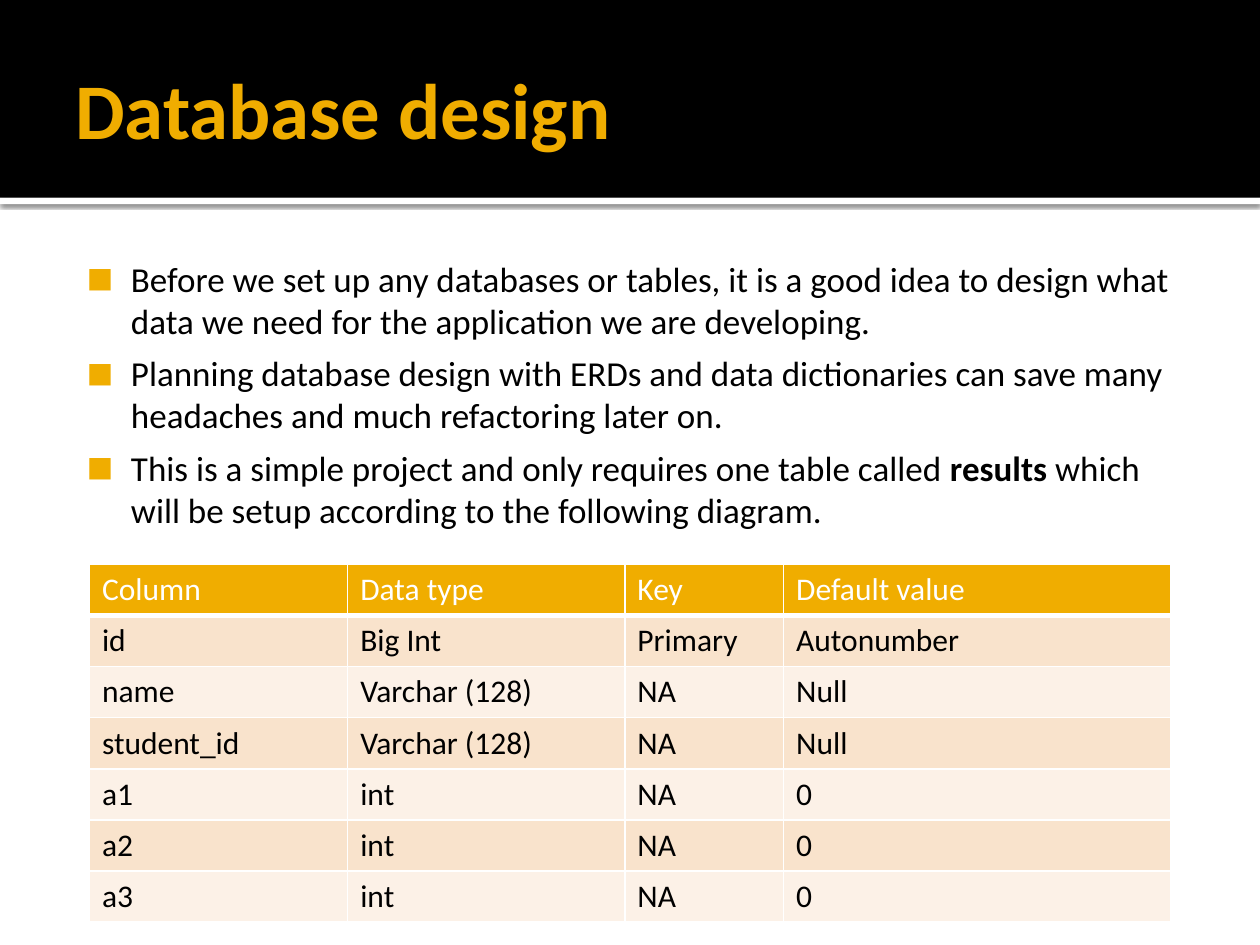
from lxml import etree
from pptx import Presentation
from pptx.dml.color import RGBColor
from pptx.enum import shapes, text
from pptx.oxml import ns
from pptx.util import Inches, Pt

FONT = "Calibri"
BLACK, WHITE, GOLD = "000000", "FFFFFF", "F0AD00"
BANDS = ("F9E3CC", "FCF1E7")

BULLETS = [
    [("Before we set up any databases or tables, it is a good idea to design what "
      "data we need for the application we are developing.", False)],
    [("Planning database design with ERDs and data dictionaries can save many "
      "headaches and much refactoring later on.", False)],
    [("This is a simple project and only requires one table called ", False),
     ("results ", True),
     ("which will be setup according to the following diagram.", False)],
]
COLUMN_WIDTHS = (2.05, 2.2, 1.26, 3.07)
ROWS = [
    ("Column", "Data type", "Key", "Default value"),
    ("id", "Big Int", "Primary", "Autonumber"),
    ("name", "Varchar (128)", "NA", "Null"),
    ("student_id", "Varchar (128)", "NA", "Null"),
    ("a1", "int", "NA", "0"),
    ("a2", "int", "NA", "0"),
    ("a3", "int", "NA", "0"),
]


def color(value):
    return RGBColor.from_string(value)


def add_xml(parent, tag, **attributes):
    values = {name: str(value) for name, value in attributes.items()}
    return etree.SubElement(parent, ns.qn(tag), values)


def style(span, size, value, bold=False):
    span.font.name = FONT
    span.font.size = Pt(size)
    span.font.bold = bold
    span.font.color.rgb = color(value)


def add_band(page, left, top, width, height, fill):
    band = page.shapes.add_shape(shapes.MSO_SHAPE.RECTANGLE, Inches(left),
                                 Inches(top), Inches(width), Inches(height))
    band.shadow.inherit = False
    band.fill.solid()
    band.fill.fore_color.rgb = color(fill)
    band.line.fill.background()
    return band


def add_text_frame(page, left, top, width, height, insets):
    box = page.shapes.add_textbox(Inches(left), Inches(top),
                                  Inches(width), Inches(height))
    frame = box.text_frame
    frame.word_wrap = True
    (frame.margin_left, frame.margin_top,
     frame.margin_right, frame.margin_bottom) = map(Inches, insets)
    return frame


def add_header(page, left, top, width, height):
    """Black band with the title, above a thin white strip with a shadow."""
    strip = add_band(page, left, top + height, width, 0.05, WHITE)
    effects = strip._element.spPr.find(ns.qn("a:effectLst"))
    shadow = add_xml(effects, "a:outerShdw", blurRad=Pt(2.5), dist=Pt(0.8),
                     dir=90 * 60000, algn="t", rotWithShape=0)
    add_xml(add_xml(shadow, "a:srgbClr", val=BLACK), "a:alpha", val=60000)
    add_band(page, left, top, width, height, BLACK)

    frame = add_text_frame(page, left + 0.5, top + 0.17, width - 1, 1.37,
                           (0.1, 0.05, 0.05, 0.05))
    frame.vertical_anchor = text.MSO_ANCHOR.MIDDLE
    frame.text = "Database design"
    style(frame.paragraphs[0].runs[0], 45, GOLD, bold=True)


def add_bullet(para):
    properties = para._p.get_or_add_pPr()
    properties.set("marL", str(Inches(0.48)))
    properties.set("indent", str(Inches(-0.35)))
    add_xml(add_xml(properties, "a:buClr"), "a:srgbClr", val=GOLD)
    add_xml(properties, "a:buSzPct", val=80000)
    add_xml(properties, "a:buFont", typeface=FONT)
    add_xml(properties, "a:buChar", char="■")


def add_body(page, left, top, width, height):
    frame = add_text_frame(page, left, top, width, height, (0.06, 0.1, 0.1, 0.05))
    for index, parts in enumerate(BULLETS):
        para = frame.add_paragraph() if index else frame.paragraphs[0]
        para.space_after = Pt(6)
        add_bullet(para)
        for words, bold in parts:
            span = para.add_run()
            span.text = words
            style(span, 20, BLACK, bold)


def add_borders(cell, bottom_width):
    properties = cell._tc.get_or_add_tcPr()
    widths = {"a:lnL": 1, "a:lnR": 1, "a:lnT": 1, "a:lnB": bottom_width}
    for position, (tag, width) in enumerate(widths.items()):
        line = add_xml(properties, tag, w=Pt(width))
        add_xml(add_xml(line, "a:solidFill"), "a:srgbClr", val=WHITE)
        properties.insert(position, line)


def add_field_table(page, left, top, width, height):
    table = page.shapes.add_table(len(ROWS), len(COLUMN_WIDTHS), Inches(left),
                                  Inches(top), Inches(width), Inches(height)).table
    for column, column_width in zip(table.columns, COLUMN_WIDTHS):
        column.width = Inches(column_width)
    for row, values in enumerate(ROWS):
        is_header = row == 0
        for column, value in enumerate(values):
            cell = table.cell(row, column)
            cell.text = value
            style(cell.text_frame.paragraphs[0].runs[0], 18,
                  WHITE if is_header else BLACK)
            cell.fill.solid()
            cell.fill.fore_color.rgb = color(
                GOLD if is_header else BANDS[(row - 1) % 2])
            add_borders(cell, 3 if is_header else 1)


def main():
    deck = Presentation()
    deck.slide_width, deck.slide_height = Inches(10), Inches(7.5)
    page = deck.slides.add_slide(deck.slide_layouts[6])
    add_header(page, 0, 0, 10, 1.57)
    add_body(page, 0.5, 1.94, 9, 5.06)
    add_field_table(page, 0.71, 4.48, sum(COLUMN_WIDTHS), 2.84)
    deck.save("out.pptx")


if __name__ == "__main__":
    main()
